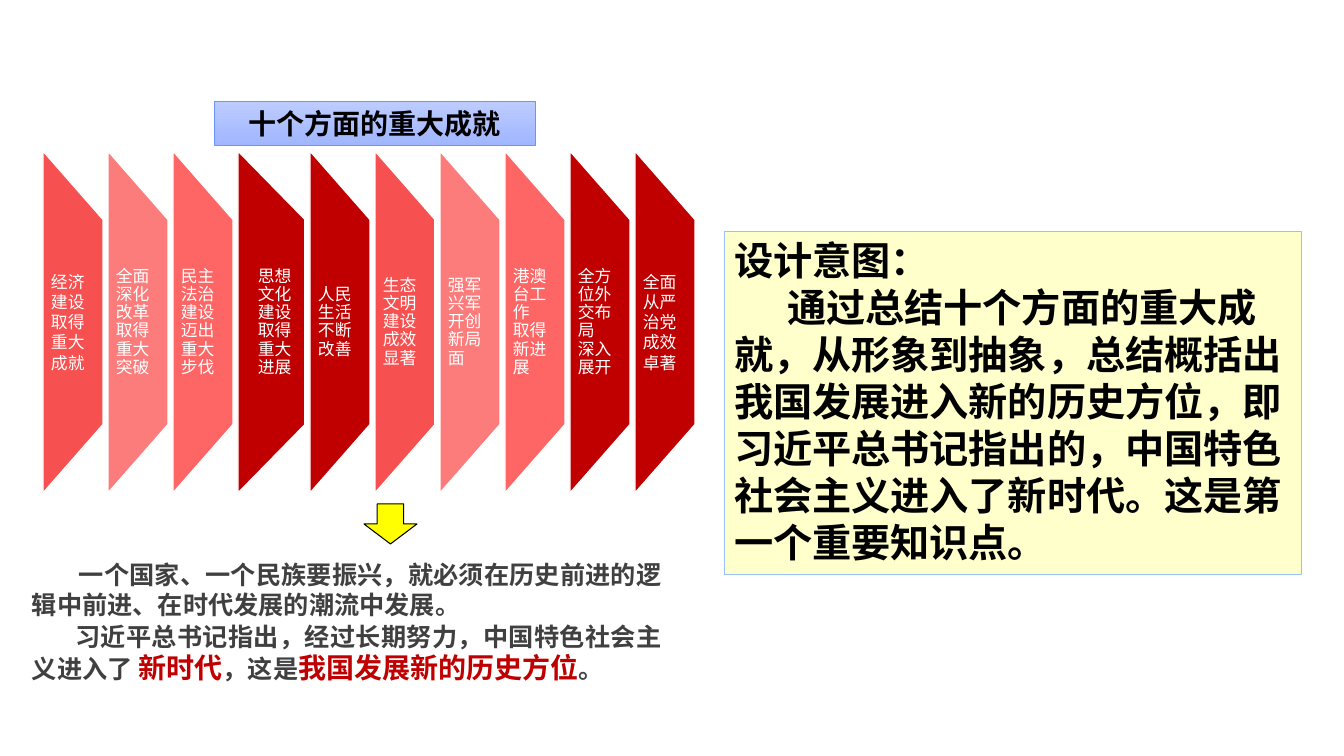
"""Build a slide on ten major achievements and the new era they lead to."""
from itertools import cycle

from lxml.etree import SubElement
from pptx import Presentation
from pptx.dml.color import RGBColor
from pptx.enum.shapes import MSO_SHAPE
from pptx.enum.text import MSO_ANCHOR, PP_ALIGN
from pptx.oxml.ns import qn
from pptx.util import Pt

PX = 914400 / 100.8
CJK_FONT = "Noto Sans CJK SC"
COLORS = {
    "black": "000000", "white": "FFFFFF", "gray": "404040", "yellow": "FFFF00",
    "red": "F65050", "pink": "FC7C7C", "coral": "FE6666", "crimson": "C00000",
    "cream": "FFFFCC", "cream_edge": "99C2FD",
    "title_top": "BDCCFF", "title_bottom": "A0B6FF", "title_edge": "6C92FD",
}

TITLE = "十个方面的重大成就"
ACHIEVEMENTS = [
    ("经济建设", "取得重大成就"),
    ("全面深化改革", "取得重大突破"),
    ("民主法治建设", "迈出重大步伐"),
    ("思想文化建设", "取得重大进展"),
    ("人民生活", "不断改善"),
    ("生态文明建设", "成效显著"),
    ("强军兴军", "开创新局面"),
    ("港澳台工作", "取得新进展"),
    ("全方位外交布局", "深入展开"),
    ("全面从严治党", "成效卓著"),
]
BANNER_COLORS = ["red", "pink", "coral", "crimson", "crimson"]
WIDE_BANNER, LOOSE_BANNERS = 3, (0, 9)
INTENT_HEADING = "设计意图："
INTENT = ("通过总结十个方面的重大成就，从形象到抽象，总结概括出我国发展进入新的历史方位，"
          "即习近平总书记指出的，中国特色社会主义进入了新时代。这是第一个重要知识点。")
PREMISE = "一个国家、一个民族要振兴，就必须在历史前进的逻辑中前进、在时代发展的潮流中发展。"
CONCLUSION = [
    ("习近平总书记指出，经过长期努力，中国特色社会主义进入了 ", False),
    ("新时代", True),
    ("，这是", False),
    ("我国发展新的历史方位", True),
    ("。", False),
]


def px(length):
    return round(length * PX)


def rgb(name):
    return RGBColor.from_string(COLORS[name])


def add_shape(kind, left, top, width, height, fill, line, line_width):
    shape = slide.shapes.add_shape(kind, px(left), px(top), px(width), px(height))
    shape.shadow.inherit = False
    if isinstance(fill, tuple):
        shape.fill.gradient()
        shape.fill.gradient_angle = 270
        for stop, name in zip(shape.fill.gradient_stops, fill):
            stop.color.rgb = rgb(name)
    else:
        shape.fill.solid()
        shape.fill.fore_color.rgb = rgb(fill)
    shape.line.color.rgb = rgb(line)
    shape.line.width = Pt(line_width)
    return shape


def prepare_frame(shape, anchor=MSO_ANCHOR.TOP, insets=(10, 5, 10, 5)):
    frame = shape.text_frame
    frame.word_wrap = True
    frame.vertical_anchor = anchor
    frame.margin_left, frame.margin_top, frame.margin_right, frame.margin_bottom = map(px, insets)
    return frame


def add_run(paragraph, text, size=12, color="black", bold=False, font="Arial"):
    run = paragraph.add_run()
    run.text = text
    run.font.size = Pt(size)
    run.font.bold = bold
    run.font.color.rgb = rgb(color)
    run.font.name = font
    SubElement(run.font._element, qn("a:ea"), typeface=CJK_FONT)


def write(frame, text, first=False, align=PP_ALIGN.LEFT, spacing=None, indent=0, **style):
    paragraph = frame.paragraphs[0] if first else frame.add_paragraph()
    paragraph.alignment = align
    if spacing:
        paragraph.line_spacing = Pt(spacing)
    if indent:
        properties = paragraph._p.get_or_add_pPr()
        properties.set("marL", "0")
        properties.set("indent", str(px(indent)))
    if text:
        add_run(paragraph, text, **style)
    return paragraph


def add_text_box(left, top, width, height):
    return slide.shapes.add_textbox(px(left), px(top), px(width), px(height))


def add_banners():
    left, gap, center_y, length = 43, 5, 322, 342
    text_height = 206
    for index, (lines, color) in enumerate(zip(ACHIEVEMENTS, cycle(BANNER_COLORS))):
        wide = index == WIDE_BANNER
        width = 67 if wide else 60
        banner = add_shape(MSO_SHAPE.FLOWCHART_MANUAL_OPERATION,
                           left + (width - length) / 2, center_y - width / 2,
                           length, width, color, "white", 1)
        banner.rotation = 270
        label = add_text_box(left, center_y - text_height / 2, width, text_height)
        frame = prepare_frame(label, MSO_ANCHOR.MIDDLE, (20 if wide else 8, 0, 8, 0))
        for row, line in enumerate(lines):
            write(frame, line, first=row == 0, color="white",
                  spacing=14.4 if index in LOOSE_BANNERS else 13)
        left += width + gap


def add_intent():
    box = add_shape(MSO_SHAPE.RECTANGLE, 724, 231, 577, 343, "cream", "cream_edge", 0.5)
    frame = prepare_frame(box)
    style = dict(size=28, bold=True, font=CJK_FONT, spacing=33.6)
    write(frame, INTENT_HEADING, first=True, **style)
    write(frame, INTENT, indent=53, **style)


def add_summary():
    frame = prepare_frame(add_text_box(22, 554, 650, 136))
    write(frame, PREMISE, first=True, align=PP_ALIGN.JUSTIFY, spacing=21.6, indent=47,
          size=18, color="gray", bold=True)
    conclusion = write(frame, "", align=PP_ALIGN.JUSTIFY, spacing=23, indent=43)
    for text, key in CONCLUSION:
        add_run(conclusion, text, size=20 if key else 18,
                color="crimson" if key else "gray", bold=True)


def add_title():
    box = add_shape(MSO_SHAPE.RECTANGLE, 214, 101, 321, 44,
                    ("title_top", "title_bottom"), "title_edge", 0.5)
    write(prepare_frame(box), TITLE, first=True, align=PP_ALIGN.CENTER,
          spacing=24, size=20, bold=True)


presentation = Presentation()
presentation.slide_width, presentation.slide_height = px(1344), px(756)
slide = presentation.slides.add_slide(presentation.slide_layouts[6])
add_shape(MSO_SHAPE.DOWN_ARROW, 364, 504, 53, 40, "yellow", "black", 0.75)
add_intent()
add_banners()
add_title()
add_summary()
presentation.save("out.pptx")
